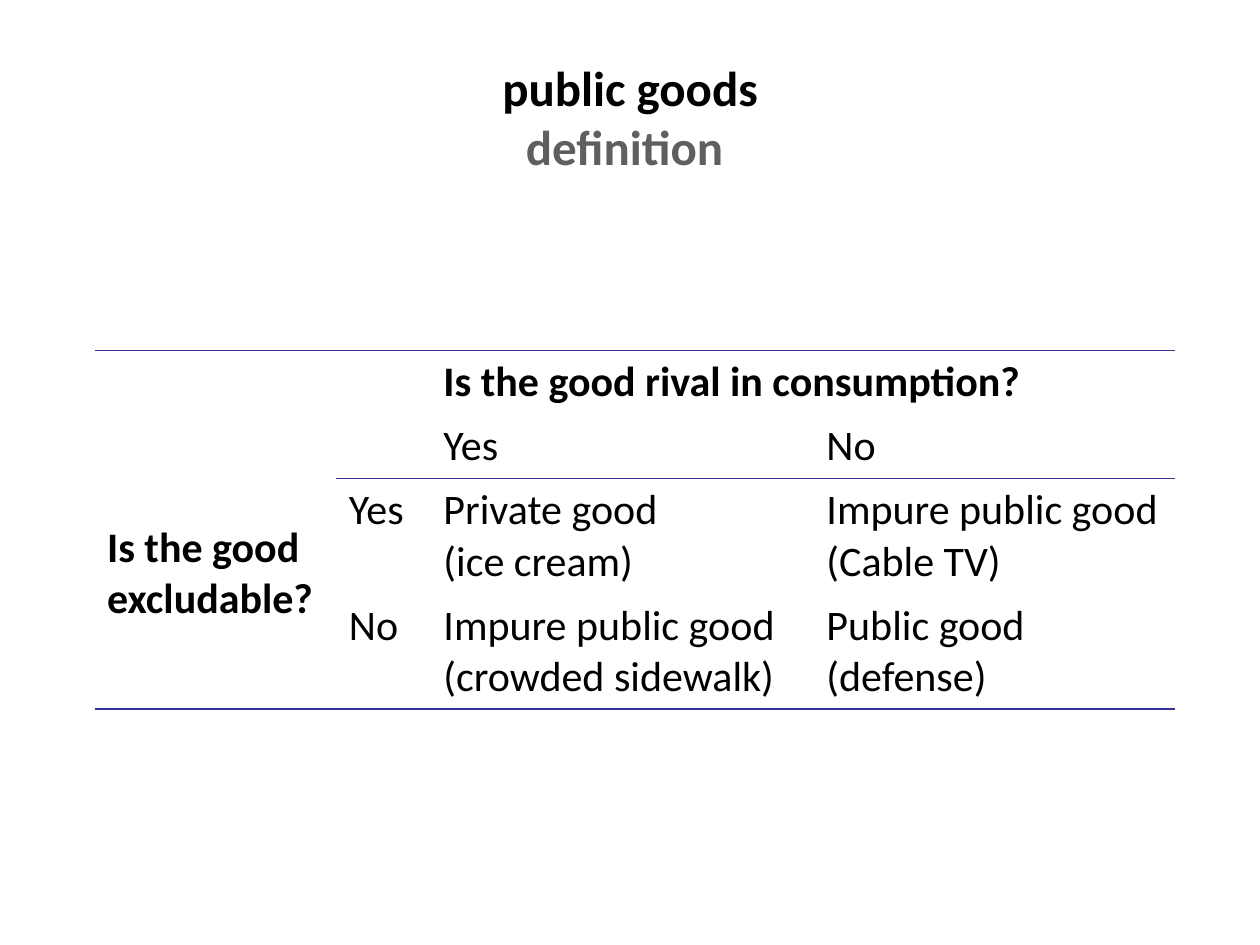
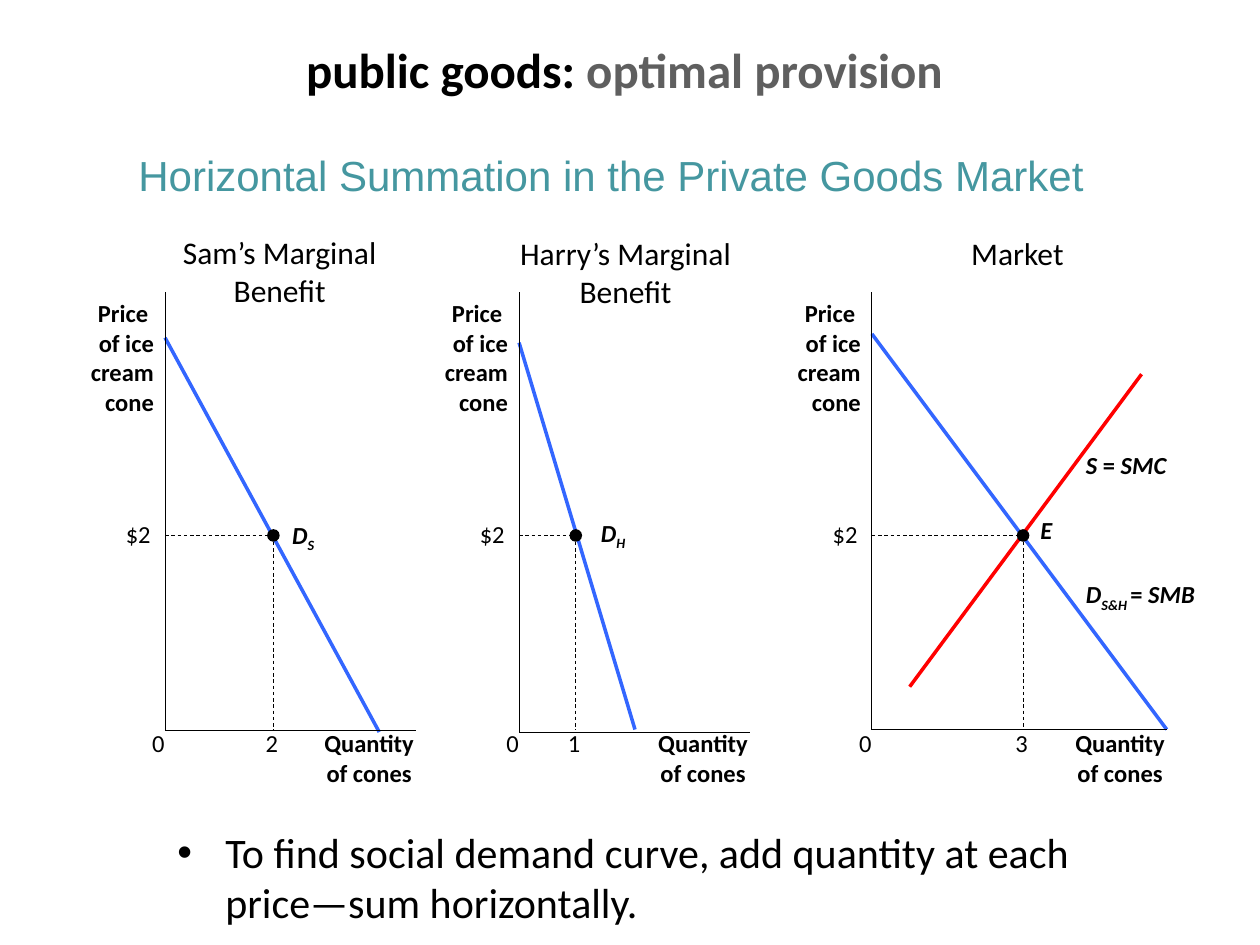
from lxml import etree
from pptx import Presentation
from pptx.dml.color import RGBColor
from pptx.enum.dml import MSO_LINE
from pptx.enum.shapes import MSO_CONNECTOR, MSO_SHAPE
from pptx.enum.text import MSO_ANCHOR, PP_ALIGN
from pptx.oxml import parse_xml
from pptx.oxml.ns import qn
from pptx.util import Inches, Pt

LEFT, CENTER, RIGHT = PP_ALIGN.LEFT, PP_ALIGN.CENTER, PP_ALIGN.RIGHT
MIDDLE, DASH = MSO_ANCHOR.MIDDLE, MSO_LINE.DASH
STRAIGHT, OVAL = MSO_CONNECTOR.STRAIGHT, MSO_SHAPE.OVAL
BLACK, GREY, TEAL = "000000", "5F5F5F", "4597A0"
BLUE, RED, RULE = "3366FF", "FF0000", "333399"
NS = "http://schemas.openxmlformats.org/drawingml/2006/main"
NO_STYLE = "{2D5ABB26-0587-4C30-8999-92F81FD0307C}"

# A paragraph is a string or a list of (text, format) runs.
BOLD = {"bold": True}
SUB = {"base": -25000}
ROMAN = {"italic": False}

GOODS = [
    ["", "", "Is the good rival in consumption?", ""],
    ["Is the good excludable?", "", "Yes", "No"],
    ["", "Yes", "Private good\n(ice cream)", "Impure public good\n(Cable TV)"],
    ["", "No", "Impure public good\n(crowded sidewalk)", "Public good\n(defense)"],
]
COLS = [1.92, 0.75, 3.04, 2.87]
ROWS = [0.51, 0.51, 0.91, 0.91]

# axis: x of the price axis; foot: y of the quantity axis; end: its right end
# demand: y at the axis, then x and y of the lower end; dot: x of the quantity
PANELS = [
    {"head": ["Sam’s Marginal", "Benefit"], "box": (0.69, 1.8, 3.06, 0.71),
     "axis": 1.31, "foot": 5.8, "end": 3.3, "demand": (2.68, 3.01, 5.81),
     "dot": 2.17, "count": "2",
     "tags": [([("D", {}), ("S", SUB)], (2.22, 4.08, 0.53, 0.34))]},
    {"head": ["Harry’s Marginal", "Benefit"], "box": (3.61, 1.81, 2.71, 0.71),
     "axis": 4.12, "foot": 5.81, "end": 5.95, "demand": (2.72, 5.04, 5.79),
     "dot": 4.57, "count": "1",
     "tags": [([("D", {}), ("H", SUB)], (4.67, 4.06, 0.54, 0.34))]},
    {"head": ["Market"], "box": (6.94, 1.81, 2.27, 0.4),
     "axis": 6.92, "foot": 5.79, "end": 9.26, "demand": (2.65, 9.26, 5.79),
     "dot": 8.12, "count": "3",
     "tags": [([("E", {})], (8.16, 4.04, 0.54, 0.34)),
              ([("S ", {}), ("=", ROMAN), (" SMC", {})], (8.52, 3.52, 0.84, 0.34)),
              ([("D", {}), ("S&H ", SUB), ("=", ROMAN), (" SMB", {})],
               (8.52, 4.55, 1.48, 0.34))]},
]
SUPPLY = (7.22, 5.45, 9.06, 2.97)
PRICE, TOP = 4.25, 2.32
POINT = "To find social demand curve, add quantity at each price—sum horizontally."


def tint(code):
    return RGBColor.from_string(code)


def write(frame, paras, align=LEFT, size=14, font="Calibri", color=BLACK,
          bold=False, italic=False):
    """Fill a text frame; a newline inside a run becomes a line break."""
    for i, para in enumerate(paras):
        p = frame.add_paragraph() if i else frame.paragraphs[0]
        p.alignment = align
        for text, style in [(para, {})] if isinstance(para, str) else para:
            for j, part in enumerate(text.split("\n")):
                if j:
                    p.add_line_break()
                if not part:
                    continue
                run = p.add_run()
                run.text = part
                f = run.font
                f.name, f.size = font, Pt(size)
                f.bold = style.get("bold", bold)
                f.italic = style.get("italic", italic)
                f.color.rgb = tint(style.get("color", color))
                if "base" in style:
                    run._r.get_or_add_rPr().set("baseline", str(style["base"]))


def label(slide, box, paras, wrap=True, **form):
    frame = slide.shapes.add_textbox(*map(Inches, box)).text_frame
    frame.word_wrap = wrap
    write(frame, paras, **form)
    return frame


def title(slide, top, runs):
    shape = slide.shapes.title
    shape.left, shape.top, shape.width, shape.height = map(
        Inches, (0.5, top, 9, 1.25))
    shape.text_frame.vertical_anchor = MIDDLE
    write(shape.text_frame, [runs], align=CENTER, size=28, bold=True)


def line(slide, ends, color=BLACK, width=0.5, dash=None):
    link = slide.shapes.add_connector(STRAIGHT, *map(Inches, ends))
    link.line.color.rgb = tint(color)
    link.line.width = Pt(width)
    if dash:
        link.line.dash_style = dash
    etree.SubElement(link._element.spPr, qn("a:effectLst"))


def border(cell, side, edge, col):
    """Rule the side if it lies on a ruled edge, counted from the table's top."""
    ruled = edge in (0, len(ROWS)) or (edge == 2 and col > 0)
    fill = (f'<a:solidFill><a:srgbClr val="{RULE}"/></a:solidFill>'
            if ruled else "<a:noFill/>")
    cell._tc.get_or_add_tcPr().insert(0, parse_xml(
        f'<a:{side} xmlns:a="{NS}" w="12700">{fill}</a:{side}>'))


def grid(slide):
    frame = slide.shapes.add_table(len(ROWS), len(COLS), *map(
        Inches, (0.75, 2.78, sum(COLS), sum(ROWS))))
    table = frame.table
    table.first_row = table.horz_banding = False
    table._tbl.tblPr.find(qn("a:tableStyleId")).text = NO_STYLE
    for col, width in zip(table.columns, COLS):
        col.width = Inches(width)
    for row, height in zip(table.rows, ROWS):
        row.height = Inches(height)
    table.cell(0, 2).merge(table.cell(0, 3))
    side = table.cell(1, 0)
    side.merge(table.cell(3, 0))
    side.margin_top = Inches(0.86)
    for r, texts in enumerate(GOODS):
        for c, text in enumerate(texts):
            cell = table.cell(r, c)
            cell.fill.background()
            if text:
                write(cell.text_frame, text.split("\n"), size=24,
                      bold=r == 0 or c == 0)
            border(cell, "lnB", r + (cell.span_height if cell.is_merge_origin else 1), c)
            border(cell, "lnT", r, c)


def panel(slide, data):
    axis, foot, end, dot = (data[k] for k in ("axis", "foot", "end", "dot"))
    high, right, low = data["demand"]
    label(slide, data["box"], data["head"], align=CENTER, size=18)
    label(slide, (axis - 0.94, 2.32, 0.95, 1.04),
          ["Price ", "of ice cream cone"], align=RIGHT, bold=True)
    label(slide, (end - 0.89, 5.73, 1.04, 0.57), ["Quantity of cones"],
          align=CENTER, bold=True)
    for text, x, y in (("$2", axis - 0.41, 4.07), ("0", axis - 0.2, 5.73),
                       (data["count"], dot - 0.16, 5.73)):
        label(slide, (x, y, 0.4 if text == "$2" else 0.3, 0.34), [text], wrap=False)
    line(slide, (axis, PRICE, dot, PRICE), dash=DASH)
    line(slide, (dot, PRICE, dot, 5.79), dash=DASH)
    line(slide, (axis, high, right, low), BLUE, 2)
    if data is PANELS[-1]:
        line(slide, SUPPLY, RED, 2)
    line(slide, (axis, TOP, axis, foot))
    line(slide, (axis, foot, end, foot))
    mark = slide.shapes.add_shape(OVAL, *map(
        Inches, (dot - 0.05, PRICE - 0.05, 0.1, 0.1)))
    mark.shadow.inherit = False
    mark.fill.solid()
    mark.fill.fore_color.rgb = tint(BLACK)
    mark.line.fill.background()
    for runs, box in data["tags"]:
        label(slide, box, [runs], bold=True, italic=True)


def main():
    deck = Presentation()
    deck.slide_width, deck.slide_height = Inches(10), Inches(7.5)
    first, second = (deck.slides.add_slide(deck.slide_layouts[5]) for _ in range(2))

    title(first, 0.3, [("public goods\n", BOLD),
                       ("definition ", {"color": GREY})])
    grid(first)

    title(second, -0.08, [("public goods: ", BOLD),
                          ("optimal provision ", {"color": GREY})])
    label(second, (1, 1.14, 8, 0.54),
          ["Horizontal Summation in the Private Goods Market"],
          size=24, font="Arial", color=TEAL)
    for data in PANELS:
        panel(second, data)
    frame = label(second, (1.31, 6.51, 7.7, 0.91), [POINT], size=24)
    props = frame.paragraphs[0]._p.get_or_add_pPr()
    props.set("marL", str(Inches(0.38)))
    props.set("indent", str(-Inches(0.38)))
    etree.SubElement(props, qn("a:buFont")).set("typeface", "Arial")
    etree.SubElement(props, qn("a:buChar")).set("char", "•")

    deck.save("out.pptx")


if __name__ == "__main__":
    main()
